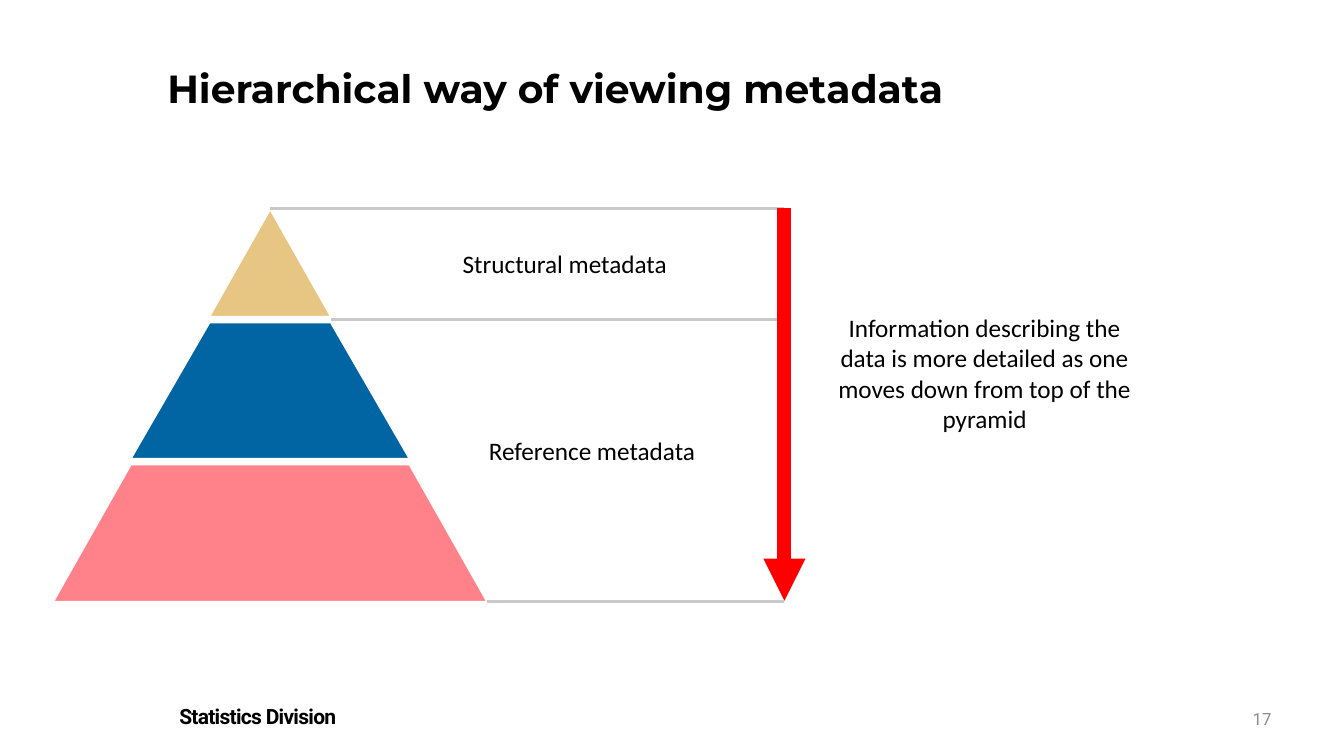
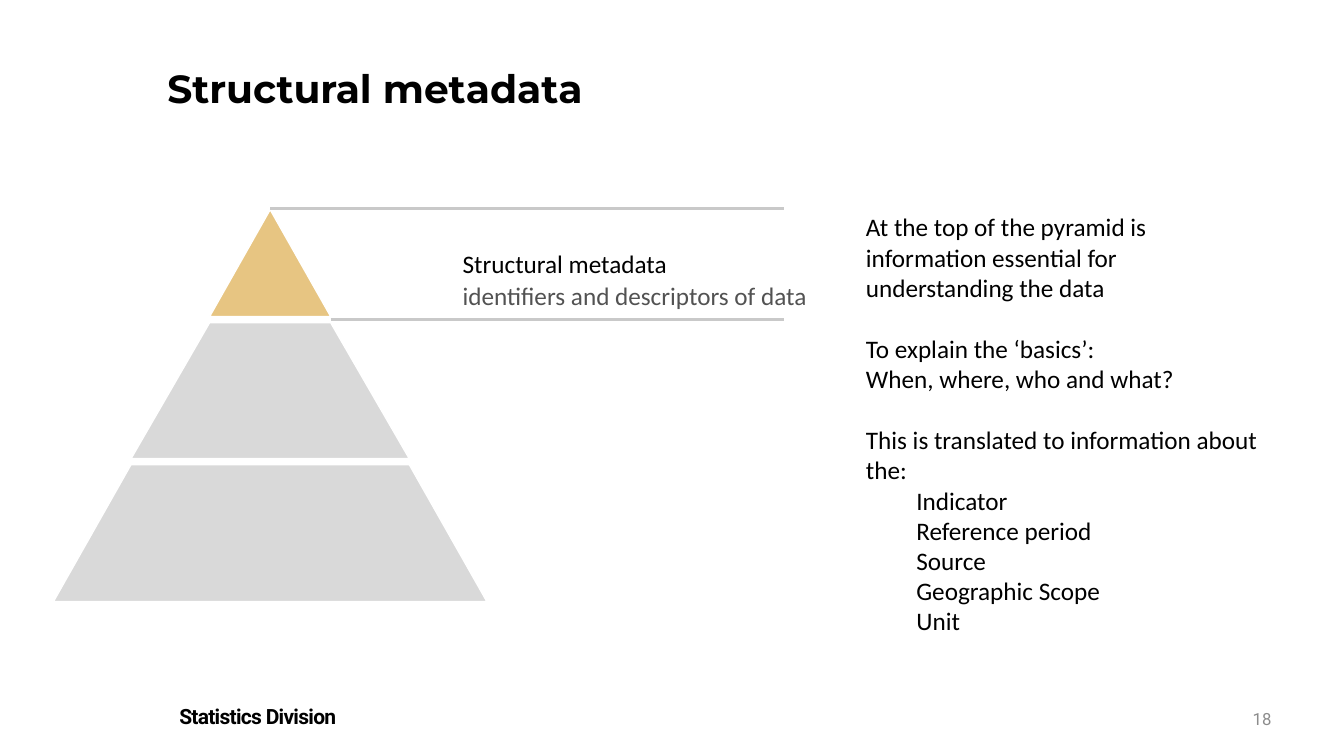
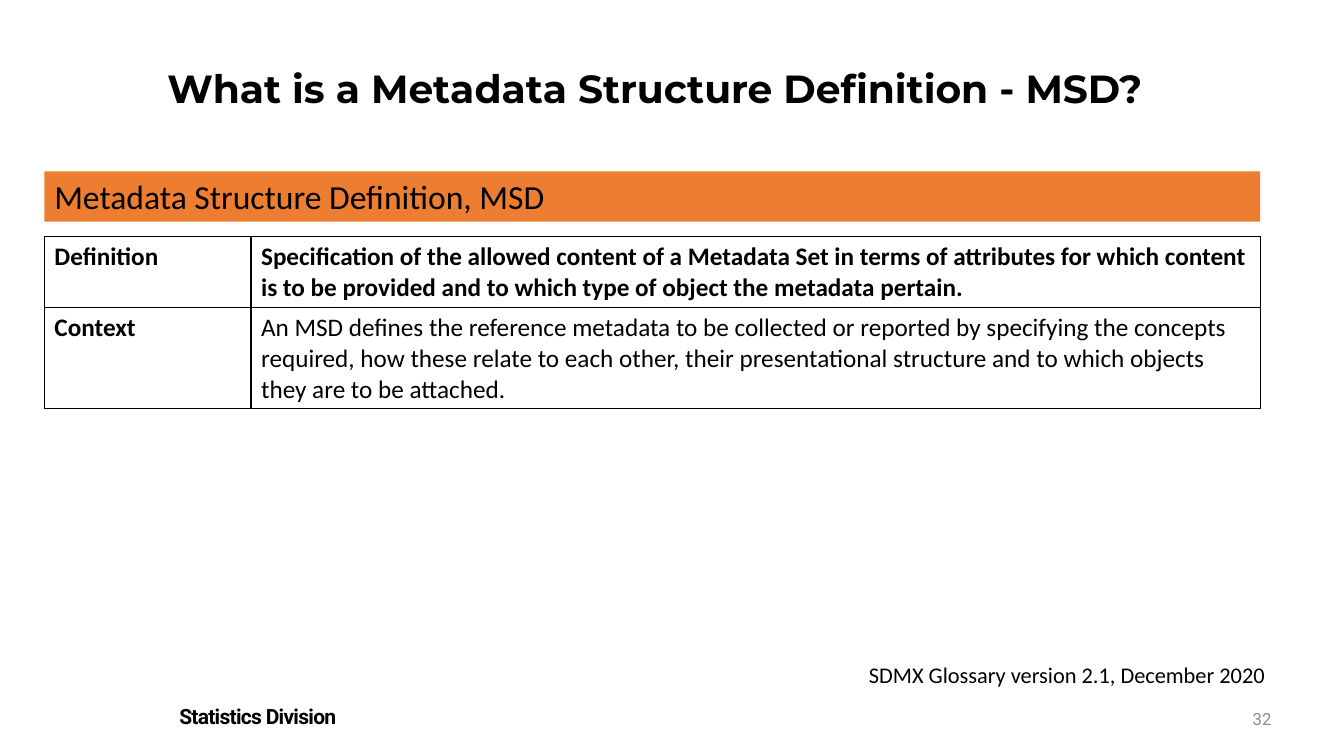
from dataclasses import dataclass

from lxml import etree
from pptx import Presentation
from pptx.dml.color import RGBColor
from pptx.enum import shapes, text
from pptx.oxml import ns
from pptx.util import Inches, Pt


@dataclass(frozen=True)
class Theme:
    black: str = "000000"
    white: str = "FFFFFF"
    sand: str = "E7C582"
    blue: str = "0065A2"
    pink: str = "FF828B"
    muted: str = "D9D9D9"
    rule: str = "C9C9C9"
    red: str = "FF0000"
    orange: str = "ED7D31"
    subtle: str = "525252"
    number: str = "8C8C8C"
    body_font: str = "Calibri"
    title_font: str = "Montserrat"
    footer_font: str = "Roboto"
    title_size: int = 28
    banner_size: int = 24
    body_size: int = 18
    source_size: int = 16
    footer_size: int = 15
    number_size: int = 12


THEME = Theme()
LEFT, CENTER, RIGHT = text.PP_ALIGN.LEFT, text.PP_ALIGN.CENTER, text.PP_ALIGN.RIGHT

# Pyramid: tier n widens from HALF_WIDTHS[n] to HALF_WIDTHS[n + 1]
APEX_X = 2.68
HALF_WIDTHS = (0, 0.6, 1.38, 2.15)
TIER_SPANS = ((2.08, 3.14), (3.2, 4.55), (4.61, 5.97))
RULE_END = 7.78
TOP_RULE, MIDDLE_RULE, BOTTOM_RULE = (APEX_X, 2.07), (3.28, 3.17), (4.83, 5.97)


class Slides:
    def __init__(self, theme):
        self.theme = theme
        self.deck = Presentation()
        self.deck.slide_width = Inches(13.33)
        self.deck.slide_height = Inches(7.5)
        self.page = None

    def style(self, para, size=None, color=None, font=None, bold=False, align=LEFT):
        para.alignment = align
        for span in para.runs:
            span.font.name = font or self.theme.body_font
            span.font.size = Pt(size or self.theme.body_size)
            span.font.bold = bold
            span.font.color.rgb = RGBColor.from_string(color or self.theme.black)

    def new_page(self, title, number):
        """Start a slide with its title, footer and page number."""
        theme = self.theme
        self.page = self.deck.slides.add_slide(self.deck.slide_layouts[5])
        heading = self.page.shapes.title
        heading.left, heading.top = Inches(1.56), Inches(0.64)
        heading.width, heading.height = Inches(10.86), Inches(0.91)
        frame = heading.text_frame
        frame.text = title
        frame.auto_size = text.MSO_AUTO_SIZE.NONE
        frame.vertical_anchor = text.MSO_ANCHOR.TOP
        frame.paragraphs[0].line_spacing = 0.9
        self.style(frame.paragraphs[0], theme.title_size, font=theme.title_font, bold=True)

        footer = self.text_box("Statistics Division", 1.68, 6.93, 5.84, 0.35,
                               size=theme.footer_size, font=theme.footer_font, bold=True)
        footer.paragraphs[0].runs[0].font._element.set("spc", "-50")
        page_number = self.text_box(str(number), 12.07, 6.93, 0.64, 0.4,
                                    size=theme.number_size, color=theme.number,
                                    font=theme.footer_font, align=RIGHT)
        page_number.vertical_anchor = text.MSO_ANCHOR.MIDDLE

    def text_box(self, content, left, top, width, height, wrap=True, **style):
        box = self.page.shapes.add_textbox(
            Inches(left), Inches(top), Inches(width), Inches(height))
        frame = box.text_frame
        frame.word_wrap = wrap
        frame.text = content
        for para in frame.paragraphs:
            self.style(para, **style)
        return frame

    def pyramid(self, colors):
        for tier, (color, (top, bottom)) in enumerate(zip(colors, TIER_SPANS)):
            upper, lower = HALF_WIDTHS[tier:tier + 2]
            corners = [(Inches(APEX_X + dx), Inches(y)) for dx, y in (
                (-lower, bottom), (-upper, top), (upper, top), (lower, bottom))]
            builder = self.page.shapes.build_freeform(*corners[0])
            builder.add_line_segments(corners[1:], close=True)
            shape = builder.convert_to_shape()
            shape.shadow.inherit = False
            shape.fill.solid()
            shape.fill.fore_color.rgb = RGBColor.from_string(color)
            shape.line.color.rgb = RGBColor.from_string(self.theme.white)
            shape.line.width = Pt(1)

    def line(self, start, end, color, width, arrow=False):
        line = self.page.shapes.add_connector(
            shapes.MSO_CONNECTOR.STRAIGHT, *map(Inches, start + end))
        line.line.color.rgb = RGBColor.from_string(color)
        line.line.width = Pt(width)
        if arrow:
            etree.SubElement(line.line._get_or_add_ln(), ns.qn("a:tailEnd"), type="triangle")
        etree.SubElement(line._element.spPr, ns.qn("a:effectLst"))

    def rules(self, *starts):
        """Draw the horizontal grey lines that bound the tiers."""
        for x, y in starts:
            self.line((x, y), (RULE_END, y), self.theme.rule, 2.25)

    def banner(self, content, left, top, width, height):
        shape = self.page.shapes.add_shape(
            shapes.MSO_SHAPE.RECTANGLE,
            Inches(left), Inches(top), Inches(width), Inches(height))
        shape.shadow.inherit = False
        shape.fill.solid()
        shape.fill.fore_color.rgb = RGBColor.from_string(self.theme.orange)
        shape.line.fill.background()
        shape.text_frame.text = content
        shape.text_frame.vertical_anchor = text.MSO_ANCHOR.TOP
        self.style(shape.text_frame.paragraphs[0], self.theme.banner_size)

    def border(self, cell):
        properties = cell._tc.get_or_add_tcPr()
        for side in ("a:lnL", "a:lnR", "a:lnT", "a:lnB"):
            edge = etree.SubElement(properties, ns.qn(side), w=str(Pt(1)))
            fill = etree.SubElement(edge, ns.qn("a:solidFill"))
            etree.SubElement(fill, ns.qn("a:srgbClr"), val=self.theme.black)

    def table(self, rows, left, top, column_widths, row_heights, bold_cells):
        table = self.page.shapes.add_table(
            len(rows), len(column_widths), Inches(left), Inches(top),
            Inches(sum(column_widths)), Inches(sum(row_heights))).table
        table.first_row = table.horz_banding = False
        for column, width in zip(table.columns, column_widths):
            column.width = Inches(width)
        for r, (values, height) in enumerate(zip(rows, row_heights)):
            table.rows[r].height = Inches(height)
            for c, value in enumerate(values):
                cell = table.cell(r, c)
                cell.text = value
                self.style(cell.text_frame.paragraphs[0], bold=(r, c) in bold_cells)
                self.border(cell)
                cell.fill.background()


def hierarchy_slide(slides):
    theme = slides.theme
    slides.new_page("Hierarchical way of viewing metadata", 17)
    slides.pyramid((theme.sand, theme.blue, theme.pink))
    slides.rules(TOP_RULE, MIDDLE_RULE, BOTTOM_RULE)
    slides.line((RULE_END, 2.06), (RULE_END, 5.96), theme.red, 10, arrow=True)
    slides.text_box("Structural metadata", 4.49, 2.41, 2.25, 0.4, wrap=False)
    slides.text_box("Reference metadata", 4.75, 4.27, 2.27, 0.4, wrap=False)
    slides.text_box("Information describing the data is more detailed as one moves down "
                    "from top of the pyramid", 8.18, 3.05, 3.17, 1.31, align=CENTER)


def structural_slide(slides):
    theme = slides.theme
    slides.new_page("Structural metadata", 18)
    slides.pyramid((theme.sand, theme.muted, theme.muted))
    slides.rules(TOP_RULE, MIDDLE_RULE)
    slides.text_box("Structural metadata", 4.49, 2.41, 2.25, 0.4, wrap=False)
    slides.text_box("identifiers and descriptors of data", 4.49, 2.73, 3.66, 0.4,
                    wrap=False, color=theme.subtle)
    statements = (
        "At the top of the pyramid is information essential for understanding the data",
        "To explain the ‘basics’:",
        "When, where, who and what?",
        "This is translated to information about the:",
    )
    items = ("Indicator", "Reference period", "Source", "Geographic Scope", "Unit")
    frame = slides.text_box("\n".join(statements + items), 8.49, 2.05, 4.11, 4.34)
    for block_start in (1, 3):
        frame.paragraphs[block_start].space_before = Pt(22)
    for para in frame.paragraphs[len(statements):]:
        para.level = 1
        para._p.get_or_add_pPr().set("marL", str(Inches(0.5)))


def definition_slide(slides):
    slides.new_page("What is a Metadata Structure Definition - MSD?", 32)
    slides.banner("Metadata Structure Definition, MSD", 0.44, 1.7, 12.06, 0.5)
    rows = (
        ("Definition",
         "Specification of the allowed content of a Metadata Set in terms of attributes for "
         "which content is to be provided and to which type of object the metadata pertain."),
        ("Context",
         "An MSD defines the reference metadata to be collected or reported by specifying the "
         "concepts required, how these relate to each other, their presentational structure "
         "and to which objects they are to be attached."),
    )
    slides.table(rows, 0.44, 2.35, (2.05, 10.01), (0.7, 1),
                 bold_cells={(0, 0), (0, 1), (1, 0)})
    slides.text_box("SDMX Glossary version 2.1, December 2020", 8.52, 6.51, 4.18, 0.37,
                    wrap=False, size=slides.theme.source_size)


def main():
    slides = Slides(THEME)
    hierarchy_slide(slides)
    structural_slide(slides)
    definition_slide(slides)
    slides.deck.save("out.pptx")


if __name__ == "__main__":
    main()
